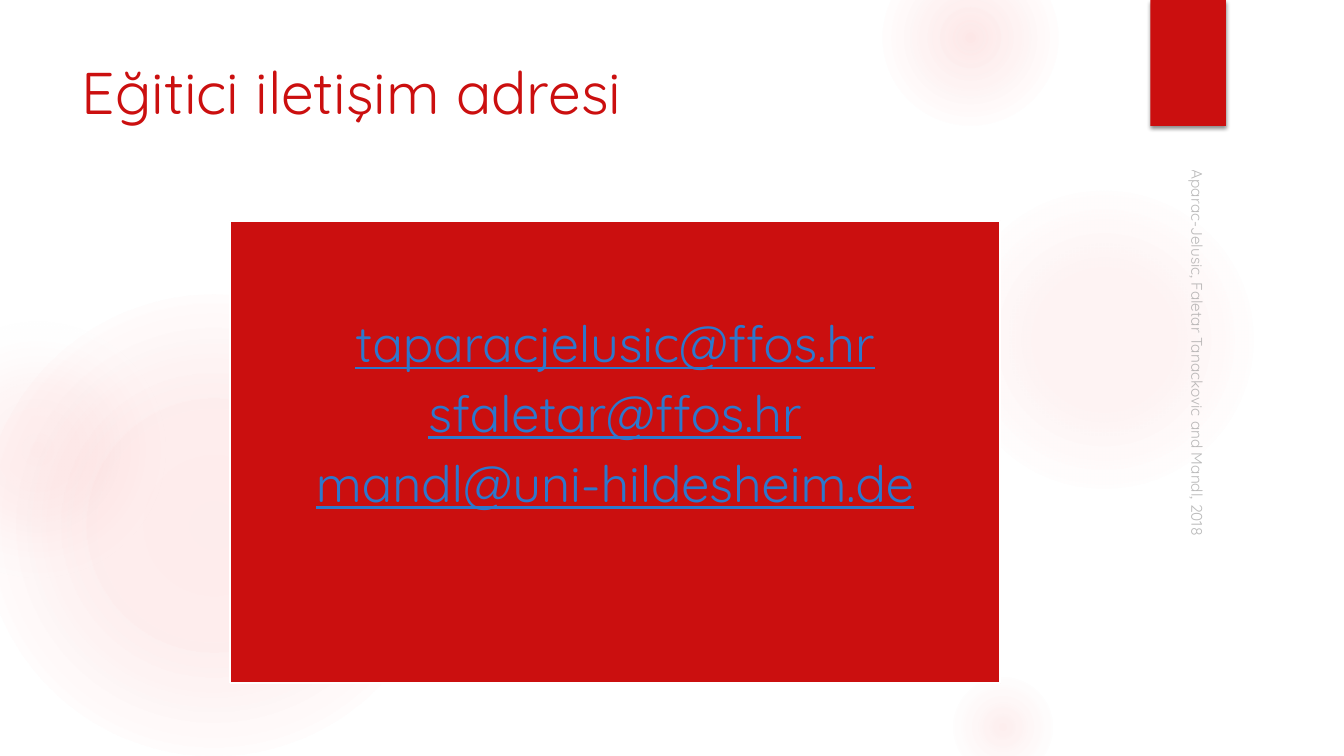
from typing import Any, NamedTuple

from lxml import etree
from pptx import Presentation
from pptx import util as u
from pptx.dml.color import RGBColor
from pptx.enum import shapes, text
from pptx.oxml import parse_xml
from pptx.oxml.ns import nsdecls, qn

RED = "CB0F0F"
GLOW = "F35C5C"
FONT = "Quicksand"


class Glow(NamedTuple):
    left: float
    top: float
    size: float
    stops: tuple[tuple[int, str, int], ...]


class Box(NamedTuple):
    left: float
    top: float
    width: float
    height: float


GLOWS = [
    Glow(-0.17, 2.92, 4.58, ((0, GLOW, 11), (36, GLOW, 10), (75, GLOW, 0))),
    Glow(-0.92, 3.17, 2.58, ((0, GLOW, 8), (36, GLOW, 5), (71, "F3F3F3", 0))),
    Glow(9.41, 1.83, 3.08, ((0, GLOW, 7), (36, GLOW, 6), (69, GLOW, 0))),
    Glow(8.75, -0.5, 1.75, ((0, GLOW, 14), (36, GLOW, 7), (73, GLOW, 0))),
    Glow(9.41, 6.67, 1.08, ((0, GLOW, 10), (31, GLOW, 5), (66, GLOW, 0))),
]
TAB = Box(11.41, 0, 0.75, 1.25)
TITLE = Box(0.71, 0.5, 10.29, 1.53)
PANEL = Box(2.28, 2.19, 7.64, 4.59)
CREDIT = Box(9.79, 3.53, 4.22, 0.33)
EMAILS = ["taparacjelusic@ffos.hr", "sfaletar@ffos.hr", "mandl@uni-hildesheim.de"]


def rgb(value: str) -> RGBColor:
    return RGBColor.from_string(value)


def apply(target: Any, values: dict[str, Any]) -> None:
    for name, value in values.items():
        setattr(target, name, value)


def place(sp: Any, box: Box) -> None:
    for name, value in box._asdict().items():
        setattr(sp, name, u.Inches(value))


def style(font: Any, size: float, color: str, **extra: Any) -> None:
    apply(font, {"name": FONT, "size": u.Pt(size), **extra})
    font.color.rgb = rgb(color)


def add_plain(slide: Any, kind: Any, box: Box) -> Any:
    sp = slide.shapes.add_shape(kind, *map(u.Inches, box))
    sp.shadow.inherit = False
    sp.line.fill.background()
    return sp


def add_glow(slide: Any, glow: Glow) -> None:
    box = Box(glow.left, glow.top, glow.size, glow.size)
    sp = add_plain(slide, shapes.MSO_SHAPE.OVAL, box)
    sp.fill.background()
    stops = "".join(
        f'<a:gs pos="{pos * 1000}"><a:srgbClr val="{color}">'
        f'<a:alpha val="{alpha * 1000}"/></a:srgbClr></a:gs>'
        for pos, color, alpha in glow.stops
    )
    grad = parse_xml(
        f'<a:gradFill {nsdecls("a")} rotWithShape="1"><a:gsLst>{stops}</a:gsLst>'
        '<a:path path="circle"><a:fillToRect l="50000" t="50000" r="50000" b="50000"/>'
        "</a:path></a:gradFill>"
    )
    sp_pr = sp._element.spPr
    sp_pr.replace(sp_pr.find(qn("a:noFill")), grad)


def add_tab(slide: Any) -> None:
    sp = add_plain(slide, shapes.MSO_SHAPE.RECTANGLE, TAB)
    sp.fill.solid()
    sp.fill.fore_color.rgb = rgb(RED)
    shadow = parse_xml(
        f'<a:outerShdw {nsdecls("a")} blurRad="{u.Pt(3)}" dist="{u.Pt(2)}" dir="5400000" '
        'rotWithShape="0"><a:srgbClr val="000000"><a:alpha val="45000"/></a:srgbClr>'
        "</a:outerShdw>"
    )
    sp._element.spPr.find(qn("a:effectLst")).append(shadow)


def fill_title(sp: Any) -> None:
    place(sp, TITLE)
    tf = sp.text_frame
    tf.text = "Eğitici iletişim adresi"
    apply(tf, {
        "word_wrap": True,
        "auto_size": text.MSO_AUTO_SIZE.NONE,
        "vertical_anchor": text.MSO_ANCHOR.TOP,
    })
    p = tf.paragraphs[0]
    p.alignment = text.PP_ALIGN.LEFT
    style(p.runs[0].font, 42, RED)


def fill_panel(sp: Any) -> None:
    place(sp, PANEL)
    sp.fill.solid()
    sp.fill.fore_color.rgb = rgb(RED)
    sp.line.color.rgb = rgb("FFFFFF")
    sp.line.width = u.Pt(1.5)
    tf = sp.text_frame
    tf.text = "\n".join(EMAILS)
    apply(tf, {
        "word_wrap": True,
        "auto_size": text.MSO_AUTO_SIZE.NONE,
        "vertical_anchor": text.MSO_ANCHOR.MIDDLE,
        "margin_left": u.Inches(0.15),
        "margin_right": u.Inches(0.15),
        "margin_top": u.Inches(0.15),
        "margin_bottom": u.Inches(0.86),
    })
    for p in tf.paragraphs:
        apply(p, {
            "alignment": text.PP_ALIGN.CENTER,
            "line_spacing": 0.9,
            "space_before": u.Pt(0),
            "space_after": u.Pt(11),
        })
        p_pr = p._p.get_or_add_pPr()
        p_pr.set("marL", "0")
        p_pr.set("indent", "0")
        etree.SubElement(p_pr, qn("a:buNone"))
        style(p.runs[0].font, 36, "2D78CC", underline=True)


def add_credit(slide: Any) -> None:
    sp = slide.shapes.add_textbox(*map(u.Inches, CREDIT))
    sp.rotation = 90
    tf = sp.text_frame
    apply(tf, {"word_wrap": True, "vertical_anchor": text.MSO_ANCHOR.BOTTOM})
    r = tf.paragraphs[0].add_run()
    r.text = "Aparac-Jelusic, Faletar Tanackovic and Mandl, 2018"
    style(r.font, 11, "8C8C8C")
    color = r._r.rPr.find(qn("a:solidFill")).find(qn("a:srgbClr"))
    etree.SubElement(color, qn("a:alpha")).set("val", "60000")


def main() -> None:
    prs = Presentation()
    prs.slide_width, prs.slide_height = u.Inches(13.33), u.Inches(7.5)
    slide = prs.slides.add_slide(prs.slide_layouts[1])
    title, panel = slide.shapes.title, slide.placeholders[1]
    for glow in GLOWS:
        add_glow(slide, glow)
    add_tab(slide)
    fill_title(title)
    fill_panel(panel)
    for sp in (title, panel):
        slide.shapes._spTree.append(sp._element)
    add_credit(slide)
    prs.save("out.pptx")


if __name__ == "__main__":
    main()
